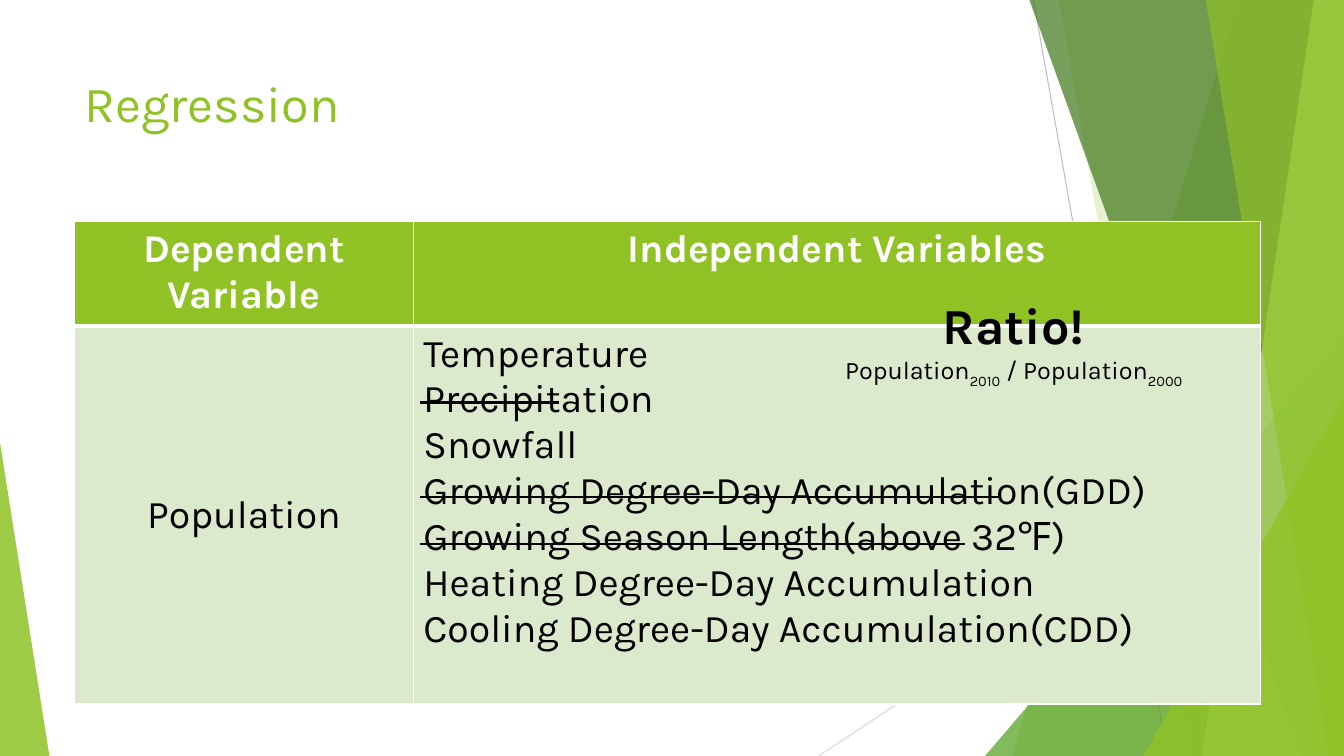
from lxml.etree import SubElement
from pptx import Presentation
from pptx.dml.color import RGBColor
from pptx.enum.shapes import MSO_CONNECTOR, MSO_SHAPE
from pptx.enum.text import MSO_ANCHOR, PP_ALIGN
from pptx.oxml import parse_xml
from pptx.oxml.ns import nsdecls, qn
from pptx.util import Inches, Pt

# Content
TITLE = "Regression"
HEADERS = ["Dependent Variable", "Independent Variables"]
DEPENDENT = "Population"
# Each variable with the length of the line striking it out (0 for none)
VARIABLES = [
    ("Temperature", 0),
    ("Precipitation", 1.37),
    ("Snowfall", 0),
    ("Growing Degree-Day Accumulation(GDD)", 5.74),
    ("Growing Season Length(above 32℉)", 5.4),
    ("Heating Degree-Day Accumulation", 0),
    ("Cooling Degree-Day Accumulation(CDD)", 0),
]
RATIO = "Ratio!"
FORMULA = [("Population", False), ("2010", True),
           (" / Population", False), ("2000", True)]

# Look
FONT = "Karla"
COLORS = {
    "lime": "90C226", "green": "54A021", "forest": "3F7819", "pale": "C0E474",
    "body": "DBE9CD", "white": "FFFFFF", "black": "000000",
    "gray": "BFBFBF", "silver": "D9D9D9",
}

# Layout in inches
WIDTH, HEIGHT = 13.33, 7.5
LEFT, TABLE_TOP = 0.74, 2.2
COLUMNS, ROWS = [3.36, 8.4], [1.0, 3.75]
STRIKE_LEFT, STRIKE_TOP, STRIKE_PITCH = 4.17, 3.53, 0.467

# Backdrop lines: start, end, color
RAYS = [((10.25, 0), (11.58, HEIGHT), "gray"),
        ((WIDTH, 4.03), (8.12, HEIGHT), "silver")]
# Bands reach the right edge: x at top, x at bottom, color, opacity
# Wedges stand on the bottom edge: left, width, top, apex, color, opacity
FACETS = [
    ("band", 12.28, 10.04, "lime", 30),
    ("band", 10.5, 11.83, "lime", 20),
    ("wedge", 9.77, 3.56, 3.33, 1, "green", 72),
    ("band", 10.21, 12.91, "forest", 70),
    ("band", 13.03, 11.92, "pale", 70),
    ("band", 11.96, 13.18, "lime", 65),
    ("wedge", 11.34, 1.99, 3.93, 1, "lime", 80),
    ("wedge", 0, 0.49, 4.39, 0, "lime", 85),
]


def color(name):
    return RGBColor.from_string(COLORS[name])


def draw_line(page, start, end, name, points):
    line = page.shapes.add_connector(
        MSO_CONNECTOR.STRAIGHT, *(Inches(v) for v in (*start, *end)))
    line.line.color.rgb = color(name)
    line.line.width = Pt(points)
    SubElement(line.element.spPr, qn("a:effectLst"))


def draw_facet(page, kind, *data):
    *place, name, opacity = data
    if kind == "band":
        top_x, bottom_x = place
        corners = [(top_x, 0), (WIDTH, 0), (WIDTH, HEIGHT), (bottom_x, HEIGHT)]
        points = [(Inches(x), Inches(y)) for x, y in corners]
        builder = page.shapes.build_freeform(*points[0])
        builder.add_line_segments(points[1:], close=True)
        facet = builder.convert_to_shape()
    else:
        left, width, top, apex = place
        facet = page.shapes.add_shape(
            MSO_SHAPE.ISOSCELES_TRIANGLE, Inches(left), Inches(top),
            Inches(width), Inches(HEIGHT - top))
        facet.adjustments[0] = apex
    facet.shadow.inherit = False
    facet.line.fill.background()
    facet.fill.solid()
    facet.fill.fore_color.rgb = color(name)
    tint = facet.element.spPr.find(f"{qn('a:solidFill')}/{qn('a:srgbClr')}")
    SubElement(tint, qn("a:alpha"), val=str(opacity * 1000))


def style(para, size, name, bold=False, align=PP_ALIGN.LEFT):
    para.alignment = align
    for span in para.runs:
        span.font.name = FONT
        span.font.size = Pt(size)
        span.font.bold = bold
        span.font.color.rgb = color(name)


def add_text_box(page, left, top, width, height):
    box = page.shapes.add_textbox(*(Inches(v) for v in (left, top, width, height)))
    box.text_frame.word_wrap = True
    return box.text_frame


def fill_cell(cell, text, fill, ink, bold, align, bottom):
    cell.text_frame.text = text
    for para in cell.text_frame.paragraphs:
        style(para, 28, ink, bold, align)
    cell.fill.solid()
    cell.fill.fore_color.rgb = color(fill)
    edges = [("lnL", 1), ("lnR", 1), ("lnT", 1), ("lnB", bottom)]
    for index, (tag, points) in enumerate(edges):
        cell._tc.get_or_add_tcPr().insert(index, parse_xml(
            f'<a:{tag} {nsdecls("a")} w="{Pt(points)}"><a:solidFill>'
            f'<a:srgbClr val="{COLORS["white"]}"/></a:solidFill></a:{tag}>'))


def add_variable_table(page):
    table = page.shapes.add_table(
        len(ROWS), len(COLUMNS), Inches(LEFT), Inches(TABLE_TOP),
        Inches(sum(COLUMNS)), Inches(sum(ROWS))).table
    for column, width in zip(table.columns, COLUMNS):
        column.width = Inches(width)
    for row, height in zip(table.rows, ROWS):
        row.height = Inches(height)
    for index, header in enumerate(HEADERS):
        fill_cell(table.cell(0, index), header, "lime", "white", True,
                  PP_ALIGN.CENTER, 3)
    fill_cell(table.cell(1, 0), DEPENDENT, "body", "black", False,
              PP_ALIGN.CENTER, 1)
    table.cell(1, 0).vertical_anchor = MSO_ANCHOR.MIDDLE
    names = "\n".join(name for name, _ in VARIABLES)
    fill_cell(table.cell(1, 1), names, "body", "black", False, PP_ALIGN.LEFT, 1)


def main():
    deck = Presentation()
    deck.slide_width, deck.slide_height = Inches(WIDTH), Inches(HEIGHT)
    page = deck.slides.add_slide(deck.slide_layouts[6])

    # Backdrop
    for start, end, name in RAYS:
        draw_line(page, start, end, name, 0.75)
    for facet in FACETS:
        draw_facet(page, *facet)

    # Title
    title = add_text_box(page, LEFT, 0.67, 9.4, 1.44)
    title.text = TITLE
    style(title.paragraphs[0], 36, "lime")

    # Table and struck-out variables
    add_variable_table(page)
    for row, (_, length) in enumerate(VARIABLES):
        if length:
            y = STRIKE_TOP + row * STRIKE_PITCH
            draw_line(page, (STRIKE_LEFT, y), (STRIKE_LEFT + length, y), "black", 2)

    # Ratio note
    note = add_text_box(page, 7.77, 2.87, 4.57, 1.01)
    note.text = RATIO
    style(note.paragraphs[0], 36, "black", True, PP_ALIGN.CENTER)
    formula = note.add_paragraph()
    for text, lowered in FORMULA:
        span = formula.add_run()
        span.text = text
        if lowered:
            span.font._element.set("baseline", "-25000")
    style(formula, 18, "black", align=PP_ALIGN.CENTER)

    deck.save("out.pptx")


if __name__ == "__main__":
    main()
